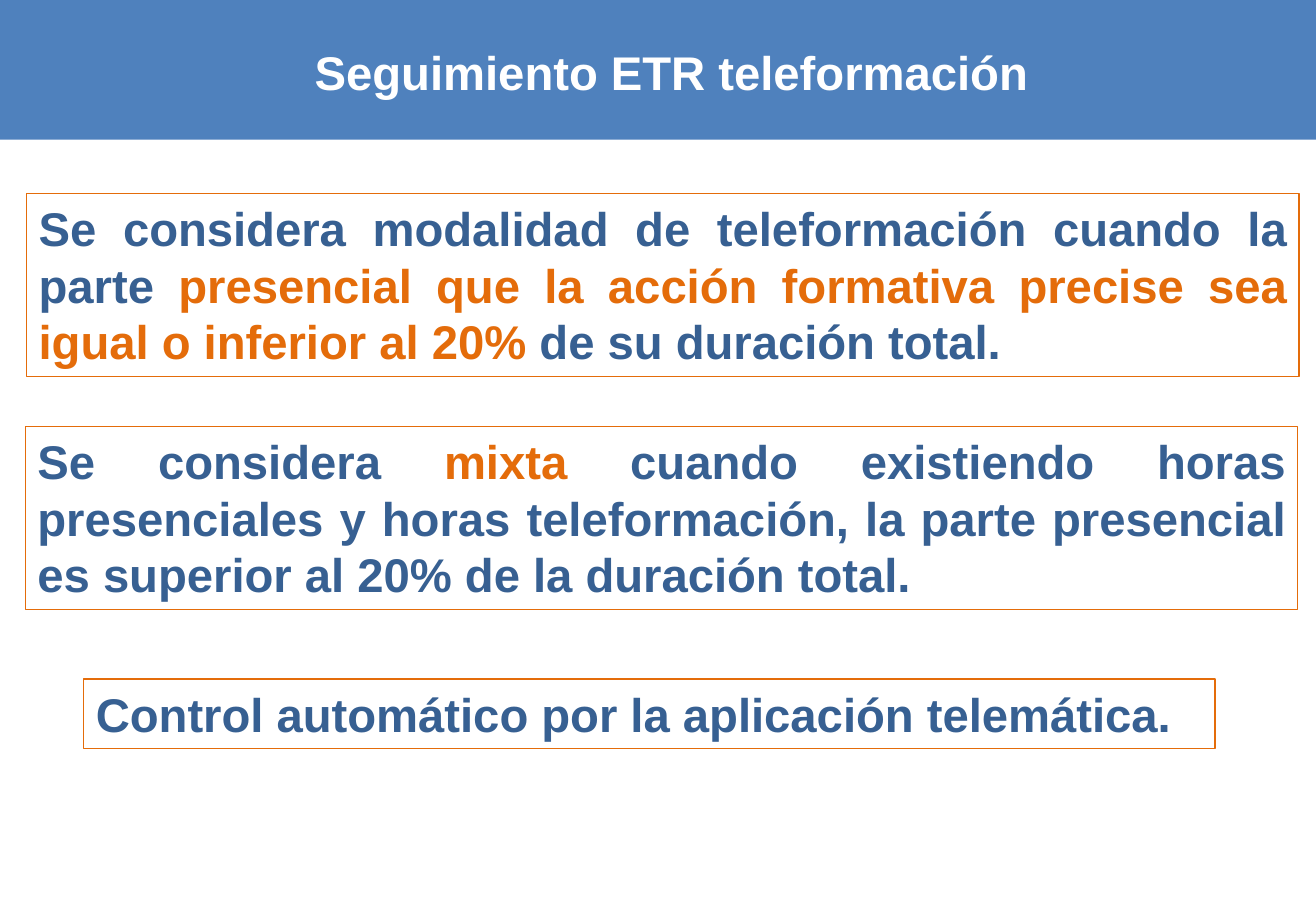
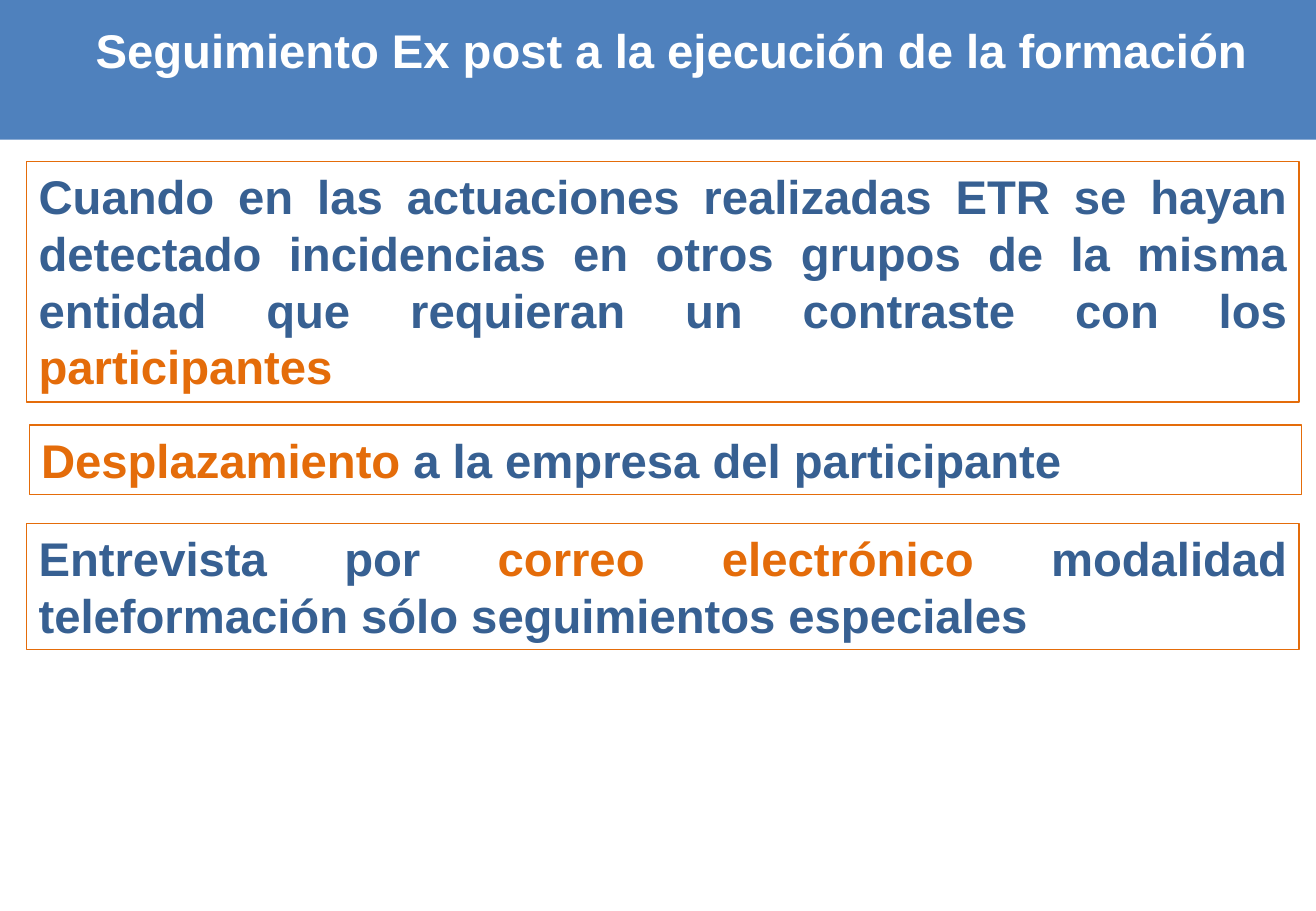
from dataclasses import dataclass

from pptx import Presentation
from pptx.dml.color import RGBColor
from pptx.enum.shapes import MSO_SHAPE
from pptx.enum.text import MSO_ANCHOR, MSO_AUTO_SIZE, PP_ALIGN
from pptx.shapes.autoshape import Shape
from pptx.slide import Slide
from pptx.util import Inches, Pt

WHITE = RGBColor(0xFF, 0xFF, 0xFF)
BAND_BLUE = RGBColor(0x4F, 0x81, 0xBD)
TEXT_BLUE = RGBColor(0x37, 0x60, 0x92)
ORANGE = RGBColor(0xE4, 0x6C, 0x0A)

FONT = "Arial"
FONT_SIZE = Pt(28)
SLIDE_WIDTH, SLIDE_HEIGHT = 10.83, 7.5
BAND_HEIGHT = 1.15
TITLE_LEFT = 0.11
LINE_HEIGHT = 0.47
VERTICAL_PADDING = 0.1
BLANK_LAYOUT = 6

Run = tuple[str, RGBColor]


@dataclass(frozen=True)
class Statement:
    left: float
    top: float
    lines: int
    runs: tuple[Run, ...]
    width: float = 10.47


@dataclass(frozen=True)
class Page:
    title: str
    title_top: float
    statements: tuple[Statement, ...]


PAGES = (
    Page("Seguimiento ETR teleformación", 0.31, (
        Statement(0.22, 1.59, 3, (
            ("Se considera modalidad de teleformación cuando la parte ", TEXT_BLUE),
            ("presencial que la acción formativa precise sea igual o inferior al 20% ", ORANGE),
            ("de su duración total.", TEXT_BLUE),
        )),
        Statement(0.21, 3.51, 3, (
            ("Se considera ", TEXT_BLUE),
            ("mixta", ORANGE),
            (" cuando existiendo horas presenciales y horas teleformación, "
             "la parte presencial es superior al 20% de la duración total.", TEXT_BLUE),
        )),
        Statement(0.69, 5.59, 1, (
            ("Control automático por la aplicación telemática.", TEXT_BLUE),
        ), width=9.31),
    )),
    Page("Seguimiento Ex post a la ejecución de la formación", 0.13, (
        Statement(0.22, 1.33, 4, (
            ("Cuando en las actuaciones realizadas ETR se hayan detectado incidencias en otros "
             "grupos de la misma entidad que requieran un contraste con los ", TEXT_BLUE),
            ("participantes", ORANGE),
        )),
        Statement(0.24, 3.5, 1, (
            ("Desplazamiento", ORANGE),
            (" a la empresa del participante", TEXT_BLUE),
        )),
        Statement(0.22, 4.31, 2, (
            ("Entrevista por ", TEXT_BLUE),
            ("correo electrónico ", ORANGE),
            ("modalidad teleformación sólo seguimientos especiales", TEXT_BLUE),
        )),
    )),
)


def text_height(lines: int) -> float:
    return lines * LINE_HEIGHT + VERTICAL_PADDING


def write_text(shape: Shape, runs: tuple[Run, ...], *, align: PP_ALIGN) -> None:
    frame = shape.text_frame
    frame.word_wrap = True
    frame.auto_size = MSO_AUTO_SIZE.SHAPE_TO_FIT_TEXT
    frame.vertical_anchor = MSO_ANCHOR.TOP
    paragraph = frame.paragraphs[0]
    paragraph.alignment = align
    for text, color in runs:
        run = paragraph.add_run()
        run.text = text
        run.font.name = FONT
        run.font.size = FONT_SIZE
        run.font.bold = True
        run.font.color.rgb = color


def add_rectangle(slide: Slide, left: float, top: float, width: float, height: float, *,
                  fill: RGBColor | None = None, line: RGBColor | None = None) -> Shape:
    rectangle = slide.shapes.add_shape(
        MSO_SHAPE.RECTANGLE, Inches(left), Inches(top), Inches(width), Inches(height))
    rectangle.shadow.inherit = False
    if fill is None:
        rectangle.fill.background()
    else:
        rectangle.fill.solid()
        rectangle.fill.fore_color.rgb = fill
    if line is None:
        rectangle.line.fill.background()
    else:
        rectangle.line.color.rgb = line
        rectangle.line.width = Pt(0.75)
    return rectangle


def add_header(slide: Slide, title: str, title_top: float) -> None:
    add_rectangle(slide, 0, 0, SLIDE_WIDTH, BAND_HEIGHT, fill=BAND_BLUE)
    title_box = slide.shapes.add_textbox(
        Inches(TITLE_LEFT), Inches(title_top), Inches(SLIDE_WIDTH), Inches(text_height(1)))
    write_text(title_box, ((title, WHITE),), align=PP_ALIGN.CENTER)


def add_statement(slide: Slide, statement: Statement) -> None:
    frame = add_rectangle(slide, statement.left, statement.top, statement.width,
                          text_height(statement.lines), line=ORANGE)
    write_text(frame, statement.runs, align=PP_ALIGN.JUSTIFY)


def main() -> None:
    presentation = Presentation()
    presentation.slide_width = Inches(SLIDE_WIDTH)
    presentation.slide_height = Inches(SLIDE_HEIGHT)
    for page in PAGES:
        slide = presentation.slides.add_slide(presentation.slide_layouts[BLANK_LAYOUT])
        add_header(slide, page.title, page.title_top)
        for statement in page.statements:
            add_statement(slide, statement)
    presentation.save("out.pptx")


if __name__ == "__main__":
    main()
